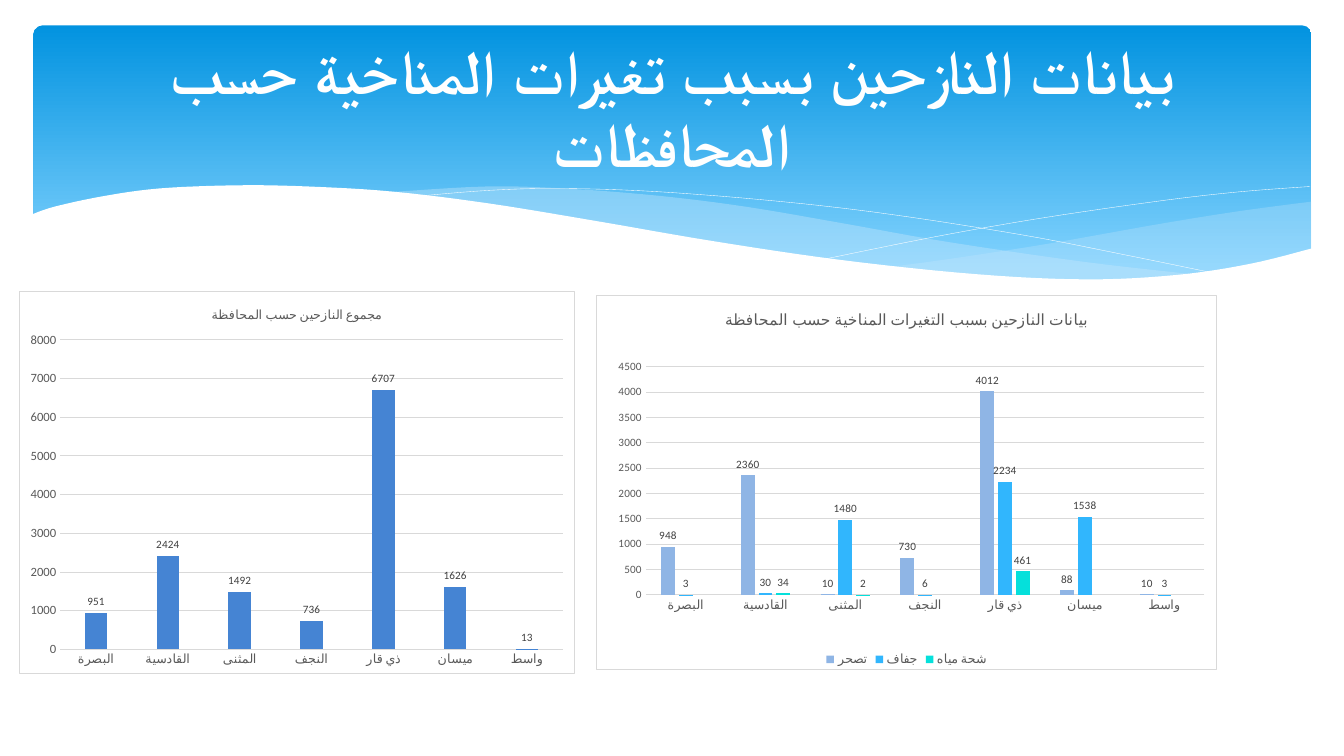
from lxml import etree
from pptx import Presentation
from pptx.chart.data import CategoryChartData
from pptx.dml.color import RGBColor
from pptx.enum.chart import XL_CHART_TYPE, XL_LABEL_POSITION, XL_LEGEND_POSITION, XL_TICK_MARK
from pptx.enum.shapes import MSO_SHAPE
from pptx.enum.text import MSO_ANCHOR, MSO_AUTO_SIZE, PP_ALIGN
from pptx.oxml import parse_xml
from pptx.oxml.ns import nsdecls, qn
from pptx.util import Cm, Pt

COLORS = {
    "white": "FFFFFF", "banner_top": "0293E0", "banner_bottom": "83D3FE", "wave": "C6E7FC",
    "grid": "D9D9D9", "text": "595959", "label": "404040",
    "total": "4584D3", "desert": "8FB5E5", "drought": "31B6FD", "scarcity": "05E0DB",
}
PROVINCES = ["البصرة", "القادسية", "المثنى", "النجف", "ذي قار", "ميسان", "واسط"]

# Wave outlines: points in cm that the curves pass through
RIGHT_WAVE_TOP = [(33.05, 5.08), (31.17, 5.33), (29.13, 5.66), (26.37, 6.15), (23.9, 6.53), (22.4, 6.73)]
RIGHT_WAVE_BOTTOM = [(22.4, 6.73), (24.33, 6.91), (26.44, 7.04), (28.6, 7.04), (30.66, 6.83),
                     (32.16, 6.53), (33.05, 6.27)]
MIDDLE_WAVE_TOP = [(30.23, 6.93), (27.33, 6.6), (23.9, 6.1), (21.31, 5.64), (18.8, 5.21),
                   (16.56, 4.93), (14.22, 4.75), (12.24, 4.7), (9.7, 4.85)]
MIDDLE_WAVE_BOTTOM = [(9.7, 4.85), (12.98, 5.26), (15.21, 5.64), (19.18, 6.3), (22.53, 6.76),
                      (25.35, 7.01), (27.69, 7.06), (30.23, 6.93)]
FALLING_LINE = [(10.46, 4.95), (12.29, 4.8), (14.1, 4.75), (16.56, 4.83), (19.69, 5.08),
                (22.5, 5.41), (25.76, 5.92), (28.14, 6.38), (30.73, 6.91)]
RISING_LINE = [(20.78, 6.53), (23.55, 5.97), (26.29, 5.49), (29.34, 5.05), (31.29, 4.83), (33.02, 4.7)]
FRONT_WAVE = [(33.1, 6.25), (31.5, 6.65), (29.64, 6.93), (27.38, 7.04), (24.61, 6.91), (21.18, 6.55),
              (17.93, 6.07), (15.14, 5.59), (12.34, 5.13), (9.91, 4.83), (7.77, 4.7), (5.97, 4.67),
              (4.01, 4.75), (2.57, 4.95), (1.37, 5.21), (0.79, 5.41)]
FRONT_BASE = [(0.79, 8.36), (33.1, 8.36)]


def rgb(name):
    return RGBColor.from_string(COLORS[name])


def set_font(font, size, color="text", bold=False):
    font.name, font.size, font.bold = "Calibri", Pt(size), bold
    font.color.rgb = rgb(color)


def write(frame, text, **style):
    """Put one centred right-to-left paragraph into a text frame."""
    frame.text = text
    paragraph = frame.paragraphs[0]
    paragraph.alignment = PP_ALIGN.CENTER
    paragraph._p.get_or_add_pPr().set("rtl", "1")
    set_font(paragraph.runs[0].font, **style)


def smooth(points, steps=6):
    """Catmull-Rom curve through the points."""
    padded = [points[0], *points, points[-1]]
    curve = [points[0]]
    for a, b, c, d in zip(padded, padded[1:], padded[2:], padded[3:]):
        for step in range(1, steps + 1):
            t = step / steps
            curve.append(tuple(
                (2 * q + (r - p) * t + (2 * p - 5 * q + 4 * r - s) * t ** 2
                 + (3 * q - p - 3 * r + s) * t ** 3) / 2
                for p, q, r, s in zip(a, b, c, d)))
    return curve


class ClimateSlide:
    def __init__(self, deck):
        self.slide = deck.slides.add_slide(deck.slide_layouts[5])
        self.shapes = self.slide.shapes

    def banner(self, left, top, width, height):
        panel = self.shapes.add_shape(MSO_SHAPE.ROUNDED_RECTANGLE, Cm(left), Cm(top), Cm(width), Cm(height))
        panel.adjustments[0] = 0.034
        panel.shadow.inherit = False
        panel.line.fill.background()
        panel.fill.gradient()
        panel.fill.gradient_angle = 270
        for stop, name, position in zip(panel.fill.gradient_stops, ("banner_top", "banner_bottom"), (0, 0.9)):
            stop.color.rgb = rgb(name)
            stop.position = position

    def outline(self, points, fill=None, opacity=100):
        """Draw a filled wave, or a thin white line when there is no fill."""
        start, *rest = [(Cm(x), Cm(y)) for x, y in points]
        builder = self.shapes.build_freeform(*start)
        builder.add_line_segments(rest, close=fill is not None)
        wave = builder.convert_to_shape()
        wave.shadow.inherit = False
        if fill is None:
            wave.fill.background()
            wave.line.color.rgb = rgb("white")
            wave.line.width = Pt(0.25)
            return
        wave.line.fill.background()
        wave.fill.solid()
        wave.fill.fore_color.rgb = rgb(fill)
        if opacity < 100:
            color = wave._element.spPr.find(qn("a:solidFill"))[0]
            etree.SubElement(color, qn("a:alpha")).set("val", str(opacity * 1000))

    def title(self, text, left, top, width, height):
        heading = self.shapes.title
        heading.left, heading.top, heading.width, heading.height = map(Cm, (left, top, width, height))
        frame = heading.text_frame
        frame.word_wrap, frame.auto_size = True, MSO_AUTO_SIZE.NONE
        frame.vertical_anchor = MSO_ANCHOR.MIDDLE
        write(frame, text, size=44, color="white", bold=True)
        self.shapes._spTree.append(heading._element)  # in front of the banner

    def chart(self, box, title, series, top_value, step, title_size, value_size, legend=False, plot_area=None):
        data = CategoryChartData()
        data.categories = PROVINCES
        for name, values, _ in series:
            data.add_series(name, values)
        chart = self.shapes.add_chart(XL_CHART_TYPE.COLUMN_CLUSTERED, *map(Cm, box), data).chart
        set_font(chart.font, 10)
        chart.has_title = True
        write(chart.chart_title.text_frame, title, size=title_size)
        chart.has_legend = legend
        if legend:
            chart.legend.position = XL_LEGEND_POSITION.BOTTOM
            chart.legend.include_in_layout = False
            set_font(chart.legend.font, 9)

        # Axes
        for axis, size in ((chart.category_axis, 9), (chart.value_axis, value_size)):
            axis.major_tick_mark = axis.minor_tick_mark = XL_TICK_MARK.NONE
            set_font(axis.tick_labels.font, size)
        values_axis = chart.value_axis
        values_axis.minimum_scale, values_axis.maximum_scale, values_axis.major_unit = 0, top_value, step
        values_axis.format.line.fill.background()
        for line in (chart.category_axis.format.line, values_axis.major_gridlines.format.line):
            line.color.rgb = rgb("grid")
            line.width = Pt(0.75)

        # Columns and their labels
        plot = chart.plots[0]
        plot.gap_width, plot.overlap, plot.vary_by_categories = 219, -27, False
        for column, (_, _, color) in zip(plot.series, series):
            column.format.fill.solid()
            column.format.fill.fore_color.rgb = rgb(color)
            column.invert_if_negative = False
            labels = column.data_labels
            labels.show_value = True
            labels.position = XL_LABEL_POSITION.OUTSIDE_END
            set_font(labels.font, 8, "label")

        # Frame around the chart and place of the plot area
        chart._chartSpace.chart.addnext(parse_xml(
            f'<c:spPr {nsdecls("c", "a")}><a:solidFill><a:srgbClr val="{COLORS["white"]}"/></a:solidFill>'
            f'<a:ln w="9525"><a:solidFill><a:srgbClr val="{COLORS["grid"]}"/></a:solidFill></a:ln></c:spPr>'))
        if plot_area:
            area = chart._chartSpace.chart.plotArea
            for old in area.findall(qn("c:layout")):
                area.remove(old)
            sizes = "".join(f'<c:{key} val="{value}"/>' for key, value in zip("xywh", plot_area))
            area.insert(0, parse_xml(
                f'<c:layout {nsdecls("c")}><c:manualLayout><c:layoutTarget val="inner"/>'
                f'<c:xMode val="edge"/><c:yMode val="edge"/>{sizes}</c:manualLayout></c:layout>'))


def main():
    deck = Presentation()
    deck.slide_width, deck.slide_height = Cm(33.87), Cm(19.05)
    page = ClimateSlide(deck)

    # Banner with waves
    page.banner(0.84, 0.64, 32.21, 6.86)
    page.outline(smooth(RIGHT_WAVE_TOP) + smooth(RIGHT_WAVE_BOTTOM), "wave", 29)
    page.outline(smooth(MIDDLE_WAVE_TOP) + smooth(MIDDLE_WAVE_BOTTOM), "wave", 40)
    page.outline(smooth(FALLING_LINE))
    page.outline(smooth(RISING_LINE))
    page.outline(smooth(FRONT_WAVE) + FRONT_BASE, "white")
    page.title("بيانات النازحين بسبب تغيرات المناخية حسب المحافظات", 1.7, 0.94, 30.48, 3.48)

    # Displaced people by cause
    page.chart(
        (15.01, 7.44, 15.67, 9.45), "بيانات النازحين بسبب التغيرات المناخية حسب المحافظة",
        [("تصحر", (948, 2360, 10, 730, 4012, 88, 10), "desert"),
         ("جفاف", (3, 30, 1480, 6, 2234, 1538, 3), "drought"),
         ("شحة مياه", (None, 34, 2, None, 461, None, None), "scarcity")],
        top_value=4500, step=500, title_size=11, value_size=8,
        legend=True, plot_area=(0.08, 0.19, 0.9, 0.61))

    # Displaced people in total
    page.chart(
        (0.48, 7.34, 14, 9.65), "مجموع النازحين حسب المحافظة",
        [("Series 1", (951, 2424, 1492, 736, 6707, 1626, 13), "total")],
        top_value=8000, step=1000, title_size=9, value_size=9)

    deck.save("out.pptx")


if __name__ == "__main__":
    main()
